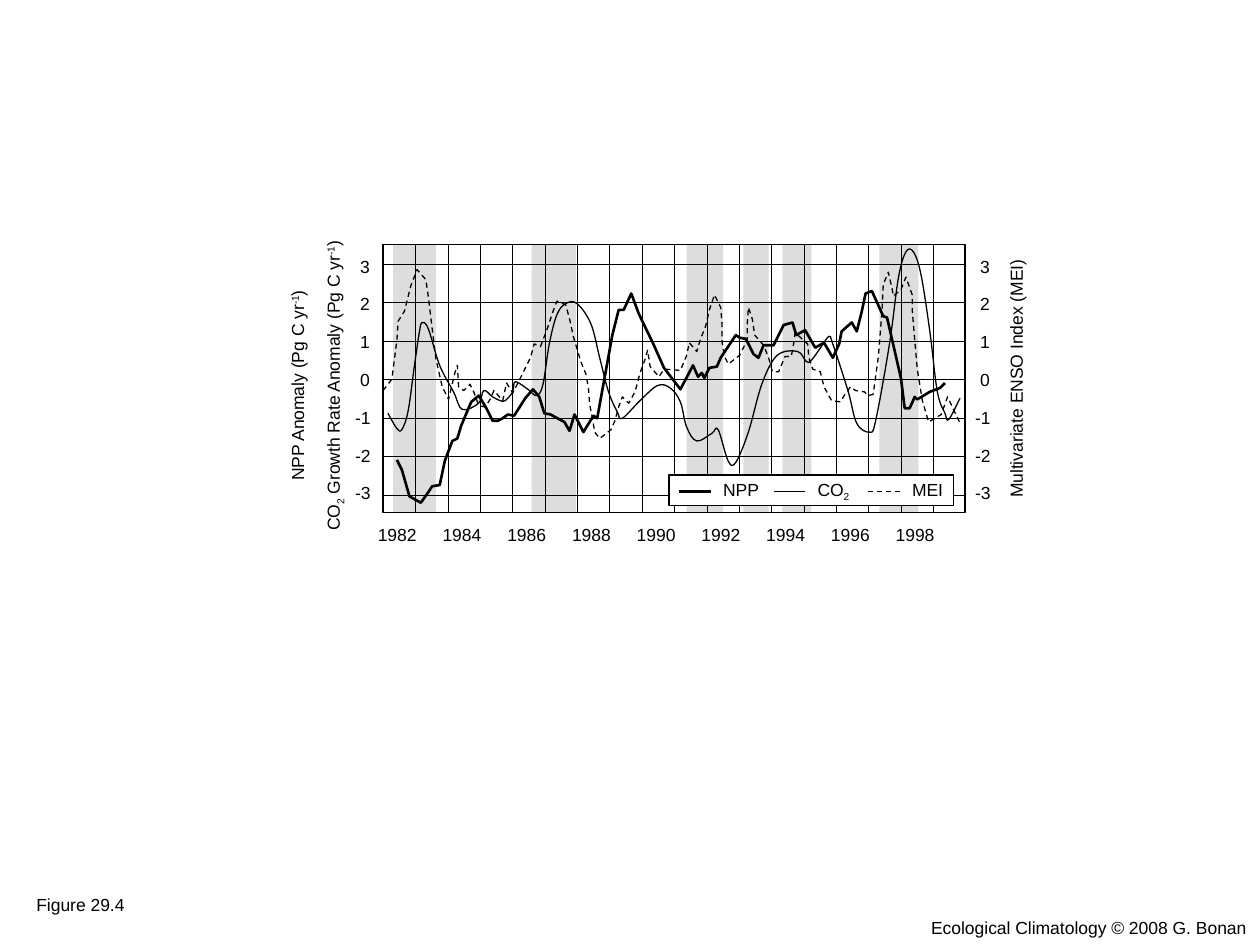
from lxml import etree
from pptx import Presentation
from pptx.dml.color import RGBColor
from pptx.enum.dml import MSO_LINE_DASH_STYLE as DASH
from pptx.enum.shapes import MSO_CONNECTOR, MSO_SHAPE
from pptx.enum.text import MSO_AUTO_SIZE, PP_ALIGN
from pptx.oxml.ns import qn
from pptx.util import Inches, Pt

BLACK, WHITE, BAND_GREY = "000000", "FFFFFF", "DDDDDD"
HAIRLINE, THIN, THICK = 0.01, 0.75, 1.5  # line widths in points
BASELINES = {"^": "30000", "_": "-25000"}  # marks of raised and lowered runs

# Plot frame and axis scales, in inches
LEFT, TOP, WIDTH, HEIGHT = 3.04, 1.94, 4.62, 2.13
RIGHT, BOTTOM = LEFT + WIDTH, TOP + HEIGHT
TOP_VALUE, VALUE_ROWS, ROW_GAP = 3, 7, 0.305
FIRST_ROW = 2.1
FIRST_YEAR, YEAR_LINES = 1982, 17
FIRST_COLUMN, LAST_COLUMN = 3.3, 7.41
YEAR_GAP = (LAST_COLUMN - FIRST_COLUMN) / (YEAR_LINES - 1)
LABEL_HEIGHT = 0.27


def paint(s, line=None, width=THIN, fill=None, dash=False):
    """Set line, fill and dash of a shape or connector, without shadow."""
    if hasattr(s, "fill"):
        s.shadow.inherit = False
        if fill:
            s.fill.solid()
            s.fill.fore_color.rgb = RGBColor.from_string(fill)
        else:
            s.fill.background()
    else:
        etree.SubElement(s._element.spPr, qn("a:effectLst"))
    if line:
        s.line.color.rgb = RGBColor.from_string(line)
        s.line.width = Pt(width)
        if dash:
            s.line.dash_style = DASH.DASH
    else:
        s.line.fill.background()


def add_label(x, y, w, runs, rotation=0, align=None):
    """Add a one-line label; runs starting with ^ or _ are raised or lowered."""
    s = shapes.add_textbox(Inches(x), Inches(y), Inches(w), Inches(LABEL_HEIGHT))
    s.rotation = rotation
    tf = s.text_frame
    tf.word_wrap = False
    tf.auto_size = MSO_AUTO_SIZE.SHAPE_TO_FIT_TEXT
    p = tf.paragraphs[0]
    p.alignment = align
    for text in runs:
        r = p.add_run()
        r.text = text.lstrip("^_")
        r.font.size = Pt(10)
        r.font.name = "Arial"
        r.font.color.rgb = RGBColor.from_string(BLACK)
        if text[0] in BASELINES:
            r.font._element.set("baseline", BASELINES[text[0]])


prs = Presentation()
prs.slide_width, prs.slide_height = Inches(10), Inches(7.5)
shapes = prs.slides.add_slide(prs.slide_layouts[6]).shapes

# Shaded periods (left, width), then the plot frame over them
bands = [(3.12, 0.34), (4.22, 0.35), (5.45, 0.29), (5.9, 0.2), (6.21, 0.23), (6.98, 0.31)]
frames = [(x, w, None, BAND_GREY) for x, w in bands] + [(LEFT, WIDTH, BLACK, None)]
for x, w, line, fill in frames:
    s = shapes.add_shape(MSO_SHAPE.RECTANGLE, Inches(x), Inches(TOP), Inches(w), Inches(HEIGHT))
    paint(s, line=line, fill=fill)

# Grid: one row per unit, one column per year
rows = [FIRST_ROW + i * ROW_GAP for i in range(VALUE_ROWS)]
columns = [FIRST_COLUMN + i * YEAR_GAP for i in range(YEAR_LINES)]
grid = [(LEFT, y, RIGHT, y) for y in rows] + [(x, BOTTOM, x, TOP) for x in columns]
for ends in grid:
    s = shapes.add_connector(MSO_CONNECTOR.STRAIGHT, *[Inches(v) for v in ends])
    paint(s, line=BLACK, width=HAIRLINE)

# Data curves, as (x, y) points in inches on the slide
co2_points = [
    (3.08, 3.28), (3.09, 3.3), (3.15, 3.4), (3.19, 3.41), (3.24, 3.26), (3.29, 2.9),
    (3.33, 2.63), (3.35, 2.56), (3.4, 2.61), (3.49, 2.9), (3.6, 3.11), (3.67, 3.25),
    (3.8, 3.2), (3.84, 3.1), (3.91, 3.15), (3.97, 3.18), (4.01, 3.18), (4.07, 3.11),
    (4.09, 3.03), (4.19, 3.09), (4.26, 3.14), (4.31, 3.05), (4.36, 2.73), (4.42, 2.5),
    (4.49, 2.41), (4.58, 2.41), (4.69, 2.57), (4.76, 2.84), (4.83, 3.11), (4.9, 3.27),
    (4.94, 3.32), (5.08, 3.18), (5.22, 3.06), (5.32, 3.08), (5.4, 3.19), (5.45, 3.39),
    (5.53, 3.5), (5.65, 3.44), (5.7, 3.41), (5.78, 3.66), (5.84, 3.67), (5.94, 3.43),
    (6.05, 3.04), (6.17, 2.82), (6.33, 2.79), (6.4, 2.87), (6.44, 2.86), (6.52, 2.75),
    (6.58, 2.67), (6.61, 2.73), (6.73, 3.1), (6.8, 3.36), (6.9, 3.43), (6.95, 3.34),
    (7.06, 2.73), (7.13, 2.21), (7.19, 2), (7.25, 2), (7.31, 2.18), (7.38, 2.63),
    (7.44, 3.11), (7.5, 3.28), (7.53, 3.33), (7.62, 3.16)]
npp_points = [
    (3.15, 3.65), (3.19, 3.73), (3.25, 3.94), (3.34, 3.99), (3.39, 3.92), (3.43, 3.86),
    (3.49, 3.85), (3.53, 3.66), (3.59, 3.5), (3.63, 3.48), (3.66, 3.38), (3.74, 3.19),
    (3.8, 3.14), (3.86, 3.24), (3.91, 3.34), (3.95, 3.34), (3.99, 3.32), (4.03, 3.29),
    (4.08, 3.3), (4.17, 3.16), (4.23, 3.09), (4.28, 3.15), (4.32, 3.28), (4.37, 3.29),
    (4.48, 3.35), (4.52, 3.42), (4.56, 3.29), (4.63, 3.43), (4.71, 3.3), (4.74, 3.32),
    (4.86, 2.66), (4.91, 2.46), (4.95, 2.46), (5.01, 2.33), (5.07, 2.49), (5.19, 2.74),
    (5.27, 2.92), (5.4, 3.09), (5.5, 2.9), (5.54, 2.99), (5.57, 2.96), (5.59, 3),
    (5.63, 2.92), (5.69, 2.91), (5.72, 2.84), (5.84, 2.66), (5.87, 2.68), (5.92, 2.69),
    (5.98, 2.81), (6.02, 2.84), (6.06, 2.74), (6.14, 2.74), (6.22, 2.58), (6.29, 2.56),
    (6.32, 2.66), (6.39, 2.62), (6.47, 2.76), (6.54, 2.72), (6.61, 2.84), (6.66, 2.73),
    (6.68, 2.63), (6.76, 2.56), (6.8, 2.63), (6.84, 2.47), (6.87, 2.33), (6.92, 2.31),
    (7.01, 2.51), (7.04, 2.52), (7.15, 3), (7.18, 3.24), (7.22, 3.24), (7.26, 3.15),
    (7.28, 3.17), (7.38, 3.11), (7.46, 3.08), (7.5, 3.04)]
mei_points = [
    (3.04, 3.1), (3.11, 3.01), (3.15, 2.7), (3.16, 2.55), (3.21, 2.47), (3.26, 2.27),
    (3.31, 2.14), (3.38, 2.22), (3.4, 2.36), (3.43, 2.61), (3.46, 2.85), (3.51, 3.07),
    (3.56, 3.17), (3.61, 2.96), (3.63, 2.9), (3.64, 3.07), (3.68, 3.1), (3.73, 3.05),
    (3.76, 3.11), (3.8, 3.22), (3.85, 3.23), (3.89, 3.17), (3.92, 3.1), (3.99, 3.18),
    (4.02, 3.04), (4.07, 3.12), (4.16, 2.94), (4.21, 2.84), (4.24, 2.73), (4.29, 2.75),
    (4.34, 2.62), (4.39, 2.47), (4.42, 2.39), (4.49, 2.42), (4.52, 2.53), (4.55, 2.67),
    (4.61, 2.87), (4.65, 2.97), (4.67, 3.08), (4.68, 3.21), (4.7, 3.31), (4.72, 3.43),
    (4.76, 3.48), (4.85, 3.41), (4.88, 3.34), (4.91, 3.23), (4.94, 3.15), (4.99, 3.2),
    (5.04, 3.11), (5.08, 2.96), (5.12, 2.85), (5.14, 2.78), (5.16, 2.91), (5.23, 2.99),
    (5.27, 2.93), (5.4, 2.94), (5.45, 2.82), (5.47, 2.72), (5.53, 2.79), (5.56, 2.69),
    (5.6, 2.59), (5.63, 2.46), (5.67, 2.34), (5.72, 2.44), (5.73, 2.57), (5.73, 2.71),
    (5.75, 2.83), (5.78, 2.89), (5.87, 2.82), (5.93, 2.7), (5.93, 2.58), (5.94, 2.44),
    (5.97, 2.53), (5.99, 2.66), (6.06, 2.74), (6.1, 2.84), (6.13, 2.95), (6.18, 2.95),
    (6.23, 2.83), (6.28, 2.83), (6.3, 2.72), (6.31, 2.64), (6.41, 2.73), (6.42, 2.84),
    (6.45, 2.93), (6.51, 2.95), (6.54, 3.07), (6.6, 3.18), (6.67, 3.19), (6.7, 3.14),
    (6.75, 3.07), (6.79, 3.1), (6.86, 3.11), (6.89, 3.14), (6.93, 3.13), (6.97, 2.84),
    (7, 2.47), (7.01, 2.26), (7.05, 2.16), (7.08, 2.29), (7.09, 2.35), (7.15, 2.3),
    (7.19, 2.2), (7.24, 2.34), (7.24, 2.46), (7.26, 2.7), (7.28, 2.93), (7.32, 3.18),
    (7.37, 3.35), (7.47, 3.29), (7.52, 3.15), (7.62, 3.36)]

# One style per series, shared by its curve and its legend key
npp_style = {"line": BLACK, "width": THICK}
co2_style = {"line": BLACK, "width": THIN}
mei_style = {"line": BLACK, "width": THIN, "dash": True}
curves = [(co2_points, co2_style, True), (npp_points, npp_style, False),
          (mei_points, mei_style, False)]
for points, style, smooth in curves:
    nodes = [(Inches(x), Inches(y)) for x, y in points]
    builder = shapes.build_freeform(*nodes[0])
    builder.add_line_segments(nodes[1:], close=False)
    s = builder.convert_to_shape()
    paint(s, **style)
    if smooth:
        # Turn each segment into a Bézier whose tangents follow the neighbours
        local = [(x - s.left, y - s.top) for x, y in nodes]
        local = [local[0]] + local + [local[-1]]
        for i, segment in enumerate(list(s._element.spPr.iter(qn("a:lnTo")))):
            before, start, end, after = local[i:i + 4]
            leave = [start[k] + (end[k] - before[k]) / 6 for k in (0, 1)]
            arrive = [end[k] - (after[k] - start[k]) / 6 for k in (0, 1)]
            segment.tag = qn("a:cubicBezTo")
            for n, (x, y) in enumerate((leave, arrive)):
                segment.insert(n, etree.Element(qn("a:pt"), x=str(round(x)), y=str(round(y))))

# Value labels, right-aligned on each axis
for label_right in (LEFT, 7.96):
    for i in range(VALUE_ROWS):
        value = TOP_VALUE - i
        w = 0.32 if value < 0 else 0.28
        add_label(label_right - w, 1.98 + 0.3 * i, w, [str(value)])

# Axis titles, turned to read upwards
axis_titles = [(7.02, 2.87, 2.09, ["Multivariate ENSO Index (MEI)"]),
               (1.49, 2.91, 1.74, ["NPP Anomaly (Pg C yr", "^-1", ")"]),
               (1.38, 2.91, 2.53, ["CO", "_2", " Growth Rate Anomaly (Pg C yr", "^-1", ")"])]
for x, y, w, runs in axis_titles:
    add_label(x, y, w, runs, rotation=270)

# Year labels, every second year
for years in range(0, YEAR_LINES, 2):
    add_label(2.9 + years * YEAR_GAP, 4.11, 0.51, [str(FIRST_YEAR + years)])

# Legend: a key line followed by its name
KEY_LEFT, KEY_Y, KEY_LENGTH, KEY_GAP = 5.39, 3.9, 0.25, 0.75
s = shapes.add_shape(MSO_SHAPE.RECTANGLE, Inches(5.31), Inches(3.77), Inches(2.26), Inches(0.24))
paint(s, line=BLACK, fill=WHITE)
legend = [(["NPP"], 0.49, npp_style), (["CO", "_2"], 0.46, co2_style), (["MEI"], 0.45, mei_style)]
for i, (runs, w, style) in enumerate(legend):
    x = KEY_LEFT + KEY_GAP * i
    ends = (x, KEY_Y, x + KEY_LENGTH, KEY_Y)
    s = shapes.add_connector(MSO_CONNECTOR.STRAIGHT, *[Inches(v) for v in ends])
    paint(s, **style)
    add_label(x + KEY_LENGTH, 3.75, w, runs)

# Figure number and credit
add_label(0.19, 7.05, 0.9, ["Figure 29.4"])
add_label(7.28, 7.23, 2.72, ["Ecological Climatology © 2008 G. Bonan"], align=PP_ALIGN.CENTER)

prs.save("out.pptx")
